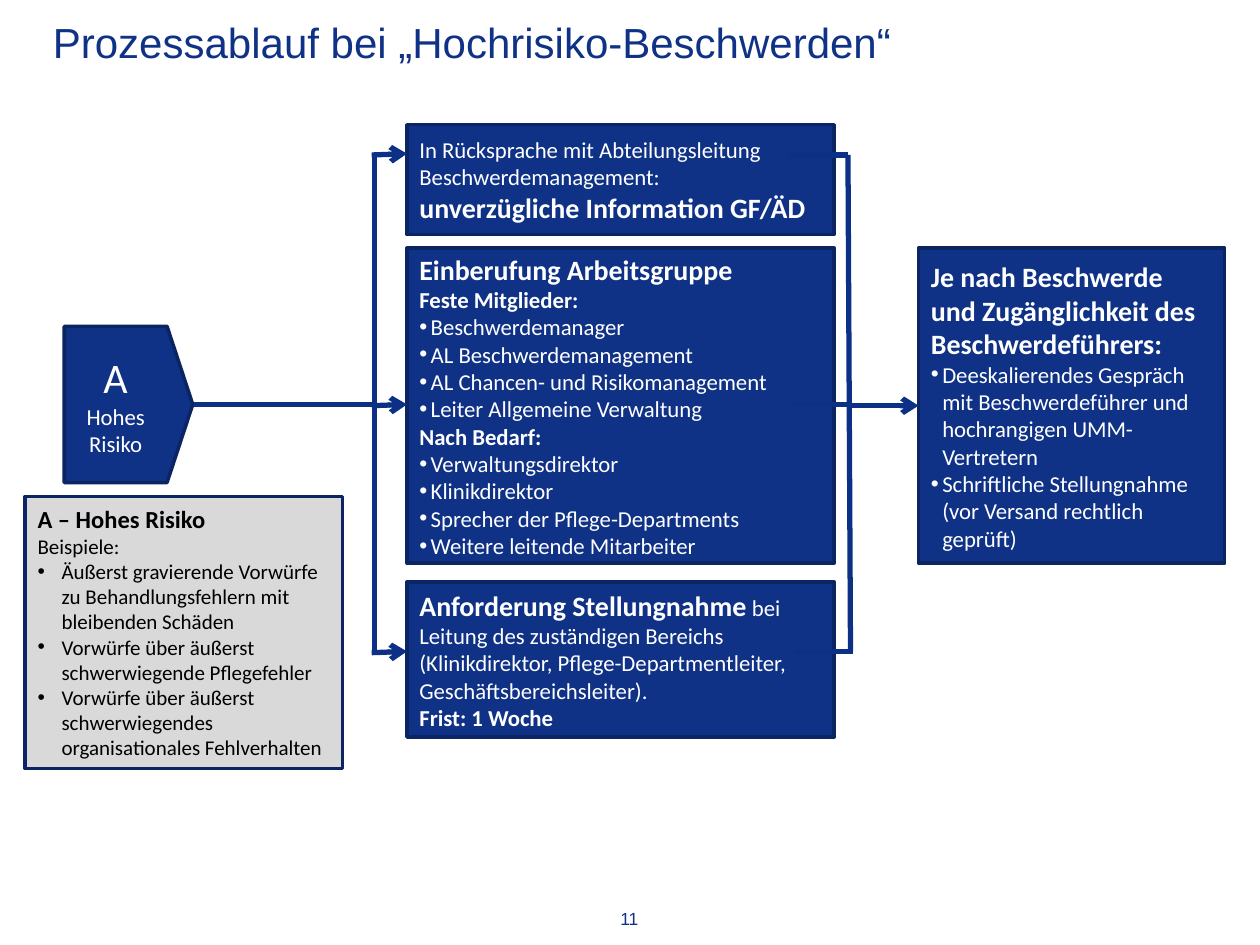
from lxml.etree import SubElement
from pptx import Presentation
from pptx.dml.color import RGBColor
from pptx.enum.shapes import MSO_CONNECTOR, MSO_SHAPE
from pptx.enum.text import MSO_ANCHOR, PP_ALIGN
from pptx.oxml.ns import qn
from pptx.util import Inches, Pt

BLUE = RGBColor(0x0F, 0x32, 0x86)
DARK_BLUE = RGBColor(0x0B, 0x25, 0x63)
LINE_BLUE = RGBColor(0x0C, 0x30, 0x86)
GREY = RGBColor(0xD9, 0xD9, 0xD9)
WHITE = RGBColor(0xFF, 0xFF, 0xFF)
BLACK = RGBColor(0, 0, 0)

HEAD = {"size": Pt(16), "bold": True}
STRONG = {"size": Pt(13), "bold": True}
BODY = {"size": Pt(13), "bold": False}
RISK_HEAD = {"size": Pt(14), "bold": True}
RISK_BODY = {"size": Pt(12), "bold": False}
LETTER = {"size": Pt(24)}
TITLE = {"size": Pt(24), "name": "Arial"}
NUMBER = {"size": Pt(10), "name": "Arial"}


def para(*runs):
    """A paragraph of (text, format) runs."""
    return runs, 0


def bullets(texts, fmt, indent):
    return [([(text, fmt)], indent) for text in texts]


def add_bullet(p, indent):
    pPr = p._p.get_or_add_pPr()
    pPr.set("marL", str(Inches(indent)))
    pPr.set("indent", str(-Inches(indent)))
    SubElement(pPr, qn("a:buFont")).set("typeface", "Arial")
    SubElement(pPr, qn("a:buChar")).set("char", "•")


def write(tf, paragraphs, color, align=PP_ALIGN.LEFT, anchor=MSO_ANCHOR.TOP):
    tf.word_wrap = True
    tf.vertical_anchor = anchor
    for i, (runs, indent) in enumerate(paragraphs):
        p = tf.add_paragraph() if i else tf.paragraphs[0]
        p.alignment = align
        if indent:
            add_bullet(p, indent)
        for text, fmt in runs:
            r = p.add_run()
            r.text = text.rstrip("\n")
            r.font.color.rgb = color
            for name, value in {"name": "Calibri", **fmt}.items():
                setattr(r.font, name, value)
            if text.endswith("\n"):
                p.add_line_break()


def add_box(s, kind, box, fill=BLUE):
    sp = s.shapes.add_shape(kind, *map(Inches, box))
    sp.shadow.inherit = False
    sp.fill.solid()
    sp.fill.fore_color.rgb = fill
    sp.line.color.rgb = DARK_BLUE
    sp.line.width = Pt(2)
    return sp


def add_process(s, box, paragraphs):
    sp = add_box(s, MSO_SHAPE.FLOWCHART_PROCESS, box)
    write(sp.text_frame, paragraphs, WHITE, anchor=MSO_ANCHOR.MIDDLE)


def add_text(s, box, paragraphs, color, align=PP_ALIGN.LEFT, inset=True):
    tf = s.shapes.add_textbox(*map(Inches, box)).text_frame
    if not inset:
        for side in ("left", "top", "right", "bottom"):
            setattr(tf, f"margin_{side}", 0)
    write(tf, paragraphs, color, align)


def add_line(s, start, end, arrow=False):
    cx = s.shapes.add_connector(MSO_CONNECTOR.STRAIGHT, *map(Inches, start + end))
    cx.line.color.rgb = LINE_BLUE
    cx.line.width = Pt(3)
    if arrow:
        SubElement(cx.line._get_or_add_ln(), qn("a:tailEnd")).set("type", "arrow")
    SubElement(cx._element.spPr, qn("a:effectLst"))


def add_risk(s):
    # Pentagon pointing right, with its text turned back upright
    sp = add_box(s, MSO_SHAPE.FLOWCHART_OFFPAGE_CONNECTOR, (0.4, 2.7, 1.24, 1.02))
    sp.rotation = 270
    write(sp.text_frame, [para(("A", LETTER)), para(("Hohes Risiko", BODY))],
          WHITE, PP_ALIGN.CENTER, MSO_ANCHOR.MIDDLE)
    sp.text_frame._txBody.bodyPr.set("vert", "vert")

    # Examples
    add_box(s, MSO_SHAPE.RECTANGLE, (0.2, 3.94, 2.52, 2.16), GREY)
    examples = ["Äußerst gravierende Vorwürfe zu Behandlungsfehlern mit bleibenden Schäden",
                "Vorwürfe über äußerst schwerwiegende Pflegefehler",
                "Vorwürfe über äußerst schwerwiegendes organisationales Fehlverhalten"]
    add_text(s, (0.2, 3.95, 2.51, 2.15),
             [para(("A – Hohes Risiko", RISK_HEAD)), para(("Beispiele:", RISK_BODY)),
              *bullets(examples, RISK_BODY, 0.19)], BLACK)


def add_steps(s):
    x, w = 3.23, 3.39
    add_process(s, (x, 0.99, w, 0.87), [
        para(("In Rücksprache mit Abteilungsleitung Beschwerdemanagement: ", BODY),
             ("unverzügliche Information GF/ÄD", HEAD))])

    members = ["Beschwerdemanager", "AL Beschwerdemanagement",
               "AL Chancen- und Risikomanagement", "Leiter Allgemeine Verwaltung"]
    on_demand = ["Verwaltungsdirektor", "Klinikdirektor",
                 "Sprecher der Pflege-Departments", "Weitere leitende Mitarbeiter"]
    add_process(s, (x, 1.97, w, 2.5), [
        para(("Einberufung Arbeitsgruppe\n", HEAD), ("Feste Mitglieder:", STRONG)),
        *bullets(members, BODY, 0.09),
        para(("Nach Bedarf:", STRONG)),
        *bullets(on_demand, BODY, 0.09)])

    add_process(s, (x, 4.62, w, 1.23), [
        para(("Anforderung Stellungnahme", HEAD),
             (" bei Leitung des zuständigen Bereichs (Klinikdirektor, "
              "Pflege-Departmentleiter, Geschäftsbereichsleiter).", BODY)),
        para(("Frist: 1 Woche", STRONG))])

    # Outcome
    outcomes = ["Deeskalierendes Gespräch mit Beschwerdeführer und hochrangigen UMM-Vertretern",
                "Schriftliche Stellungnahme (vor Versand rechtlich geprüft)"]
    add_process(s, (7.29, 1.97, 2.43, 2.5), [
        para(("Je nach Beschwerde und Zugänglichkeit des Beschwerdeführers:", HEAD)),
        *bullets(outcomes, BODY, 0.09)])


def add_flow(s):
    # Split from the risk to the three steps
    add_line(s, (1.54, 3.21), (2.97, 3.21))
    add_line(s, (2.97, 1.23), (2.97, 5.18))
    for y in (1.23, 3.22, 5.18):
        add_line(s, (2.95, y), (3.23, y - 0.01), arrow=True)

    # Merge from the steps to the outcome
    for x, y in ((6.26, 1.23), (6.28, 3.21), (6.3, 5.17)):
        add_line(s, (x, y), (x + 0.47, y))
    add_line(s, (6.73, 1.23), (6.75, 5.17))
    add_line(s, (6.73, 3.22), (7.29, 3.22), arrow=True)


def main():
    prs = Presentation()
    prs.slide_width, prs.slide_height = Inches(10), Inches(7.5)
    s = prs.slides.add_slide(prs.slide_layouts[6])
    add_text(s, (0.42, 0.13, 9.17, 0.93),
             [para(("Prozessablauf bei „Hochrisiko-Beschwerden“", TITLE))],
             BLUE, inset=False)
    add_risk(s)
    add_steps(s)
    add_flow(s)
    add_text(s, (4.76, 7.21, 0.47, 0.17), [para(("11", NUMBER))],
             BLUE, PP_ALIGN.CENTER, inset=False)
    prs.save("out.pptx")


if __name__ == "__main__":
    main()
